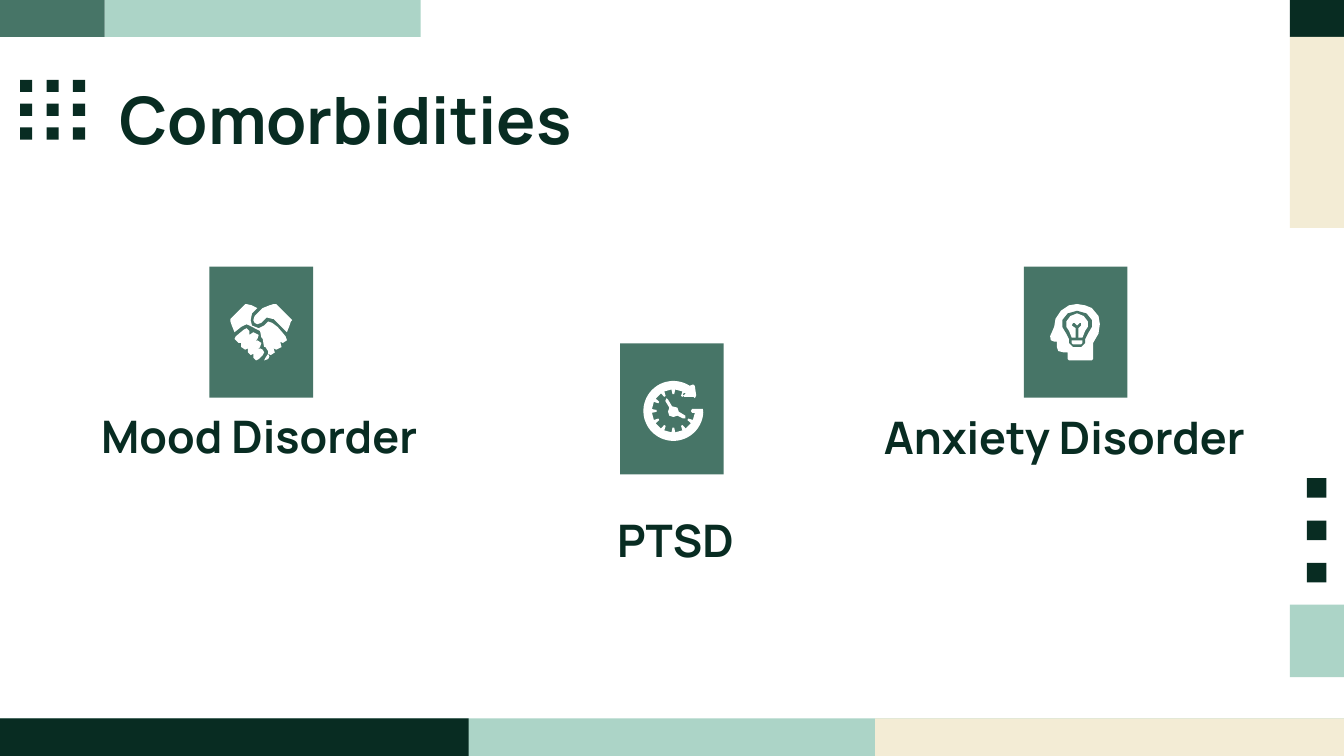
from math import cos, radians, sin

from pptx import Presentation
from pptx.dml.color import RGBColor
from pptx.enum.shapes import MSO_SHAPE
from pptx.enum.text import MSO_ANCHOR, MSO_AUTO_SIZE, PP_ALIGN
from pptx.util import Cm, Pt

DARK, GREEN, MINT, CREAM, WHITE = "082C22", "477567", "ACD4C7", "F3ECD5", "FFFFFF"


def paint(shape, color):
    shape.shadow.inherit = False
    shape.fill.solid()
    shape.fill.fore_color.rgb = RGBColor.from_string(color)
    shape.line.fill.background()


def write(box, text, size, align, anchor):
    frame = box.text_frame
    frame.text = text
    frame.word_wrap = True
    frame.auto_size = MSO_AUTO_SIZE.NONE
    frame.vertical_anchor = anchor
    frame.margin_left = frame.margin_right = Cm(0.25)
    frame.margin_top = frame.margin_bottom = Cm(0.25)
    para = frame.paragraphs[0]
    para.alignment = align
    font = para.runs[0].font
    font.name, font.size, font.bold = "Manrope", Pt(size), True
    font.color.rgb = RGBColor.from_string(DARK)


deck = Presentation()
deck.slide_width, deck.slide_height = Cm(25.4), Cm(14.29)
slide = deck.slides.add_slide(deck.slide_layouts[5])
shapes = slide.shapes

# Edge bands, dot grids and icon tiles: left, top, width, height in cm
blocks = [
    (1.98, 0, 5.97, 0.7, MINT),
    (0, 0, 1.98, 0.7, GREEN),
    (24.38, 0, 1.02, 0.7, DARK),
    (24.38, 0.7, 1.02, 3.61, CREAM),
    (24.38, 11.43, 1.02, 1.37, MINT),
    (0, 13.58, 25.4, 0.71, MINT),
    (0, 13.58, 8.86, 0.71, DARK),
    (16.54, 13.58, 8.86, 0.71, CREAM),
]
blocks += [(24.7, 9.04 + 0.8 * row, 0.37, 0.37, DARK) for row in range(3)]
blocks += [
    (0.38 + 0.5 * column, 1.51 + 0.45 * row, 0.23, 0.23, DARK)
    for row in range(3) for column in range(3)
]
tile_width, tile_height = 1.96, 2.48
tile_centers = {"mood": (4.94, 6.28), "ptsd": (12.7, 7.73), "anxiety": (20.33, 6.28)}
for x, y in tile_centers.values():
    blocks.append((x - tile_width / 2, y - tile_height / 2, tile_width, tile_height, GREEN))
for left, top, width, height, color in blocks:
    block = shapes.add_shape(MSO_SHAPE.RECTANGLE, Cm(left), Cm(top), Cm(width), Cm(height))
    paint(block, color)

# Handshake outlines, in hundredths of an inch from the tile center
thumb_tip = [(5, 16), (3, 19), (2, 21), (5, 20), (6, 18)]
fingers = [
    (-11, -3), (-13, -2), (-19, 3), (-20, 5), (-17, 8), (-15, 8), (-15, 11), (-12, 13),
    (-10, 12), (-10, 15), (-8, 17), (-6, 16), (-6, 19), (-4, 21), (-2, 20), (1, 17),
    (2, 15), (1, 13), (-1, 12), (-3, 13), (-1, 11), (0, 8), (-3, 6), (-5, 7), (-3, 5),
    (-2, 2), (-6, 0), (-9, 2), (-9, -1),
]
left_hand = [
    (-11, -21), (-12, -21), (-23, -10), (-23, -8), (-22, -5), (-20, 0), (-15, -4),
    (-11, -6), (-7, -4), (-5, -3), (-1, -1), (0, 4), (1, 5), (2, 11), (3, 11), (5, 14),
    (5, 16), (7, 17), (10, 15), (9, 12), (11, 13), (15, 11), (14, 7), (16, 8), (19, 6),
    (18, 3), (12, -4), (8, -7), (5, -8), (2, -5), (-2, -3), (-7, -5), (-8, -9),
    (-7, -14), (-3, -18), (-7, -20),
]
right_hand = [
    (10, -21), (9, -21), (6, -20), (1, -18), (-5, -12), (-6, -9), (-5, -7), (-3, -6),
    (0, -7), (4, -11), (8, -10), (9, -10), (19, 0), (21, -5), (22, -8), (23, -9),
    (22, -10), (11, -21),
]

# Head with a light bulb
head = [
    (18, -6), (17, -12), (12, -18), (7, -20), (1, -21), (-5, -20), (-11, -16),
    (-15, -10), (-16, -4), (-19, 3), (-18.5, 6), (-16, 7), (-14, 7), (-14, 11),
    (-13, 14), (-9, 15), (-6, 15), (-6, 20), (-5, 21), (12, 21), (13, 20), (13, 8), (17, 1),
]
bulb_rim = [
    (1, -16), (8, -14), (12, -9), (12, -4), (9, 1), (7, 5), (7, 8), (4, 11), (-2, 11),
    (-5, 8), (-5, 5), (-7, 1), (-10, -4), (-10, -9), (-6, -14),
]
bulb = [
    (1, -14), (6, -12), (9, -8), (9, -4), (7, -1), (5, 4), (2, 4), (2, -3), (4, -5),
    (4, -7), (3, -7), (1, -5), (-1, -7), (-2, -7), (-3, -5), (0, -3), (0, 4), (-3, 4),
    (-5, -1), (-7, -4), (-7, -8), (-4, -12),
]
bulb_base = [(-3, 6), (-3, 8), (-2, 9), (4, 9), (5, 8), (5, 6)]

# Clock: outer arc, arrowhead, then the inner edge with a tick every 30 degrees
polar = [(22.3, angle) for angle in range(3, 307, 6)]
outer_count = len(polar)
for angle in range(300, 0, -30):
    polar += [(16, angle + 5), (12.5, angle + 3), (12.5, angle - 3), (16, angle - 5)]
ring = [(1 + r * cos(radians(a)), 1.5 + r * sin(radians(a))) for r, a in polar]
arrowhead = [(15, -18), (16, -18), (17, -17), (18, -10), (17, -8), (16, -9), (9, -9), (8, -11), (9, -12)]
ring_end = [(17, 3), (15, 3), (14, 1.5), (15, 0), (23, 0)]
clock_face = ring[:outer_count] + arrowhead + ring[outer_count:] + ring_end
clock_hands = [
    (-4, -8), (-5, -6), (-2, -1), (-3, 2), (-2, 5), (1, 6), (4, 5), (8, 7), (10, 7),
    (10, 5), (5, 2), (4, -1), (0, -2), (-3, -7),
]

# Draw the icons
icon_parts = [
    ("mood", thumb_tip, WHITE), ("mood", fingers, WHITE),
    ("mood", left_hand, WHITE), ("mood", right_hand, WHITE),
    ("anxiety", head, WHITE), ("anxiety", bulb_rim, GREEN),
    ("anxiety", bulb, WHITE), ("anxiety", bulb_base, WHITE),
    ("ptsd", clock_face, WHITE), ("ptsd", clock_hands, WHITE),
]
for tile, outline, color in icon_parts:
    points = [(x * 25.4, y * 25.4) for x, y in outline]
    builder = shapes.build_freeform(*points[0], scale=Cm(0.001))
    builder.add_line_segments(points[1:], close=True)
    x, y = tile_centers[tile]
    paint(builder.convert_to_shape(Cm(x), Cm(y)), color)

# Title and labels
title = shapes.title
title.left, title.top, title.width, title.height = Cm(2.01), Cm(1.24), Cm(21.41), Cm(1.6)
write(title, "Comorbidities", 35, PP_ALIGN.LEFT, MSO_ANCHOR.TOP)
labels = [
    ("Mood Disorder", 1.32, 7.62, 7.16),
    ("Anxiety Disorder", 16.05, 7.65, 8.13),
    ("PTSD", 9.07, 9.58, 7.39),
]
for text, left, top, width in labels:
    box = shapes.add_textbox(Cm(left), Cm(top), Cm(width), Cm(1.37))
    write(box, text, 24, PP_ALIGN.CENTER, MSO_ANCHOR.BOTTOM)

deck.save("out.pptx")
